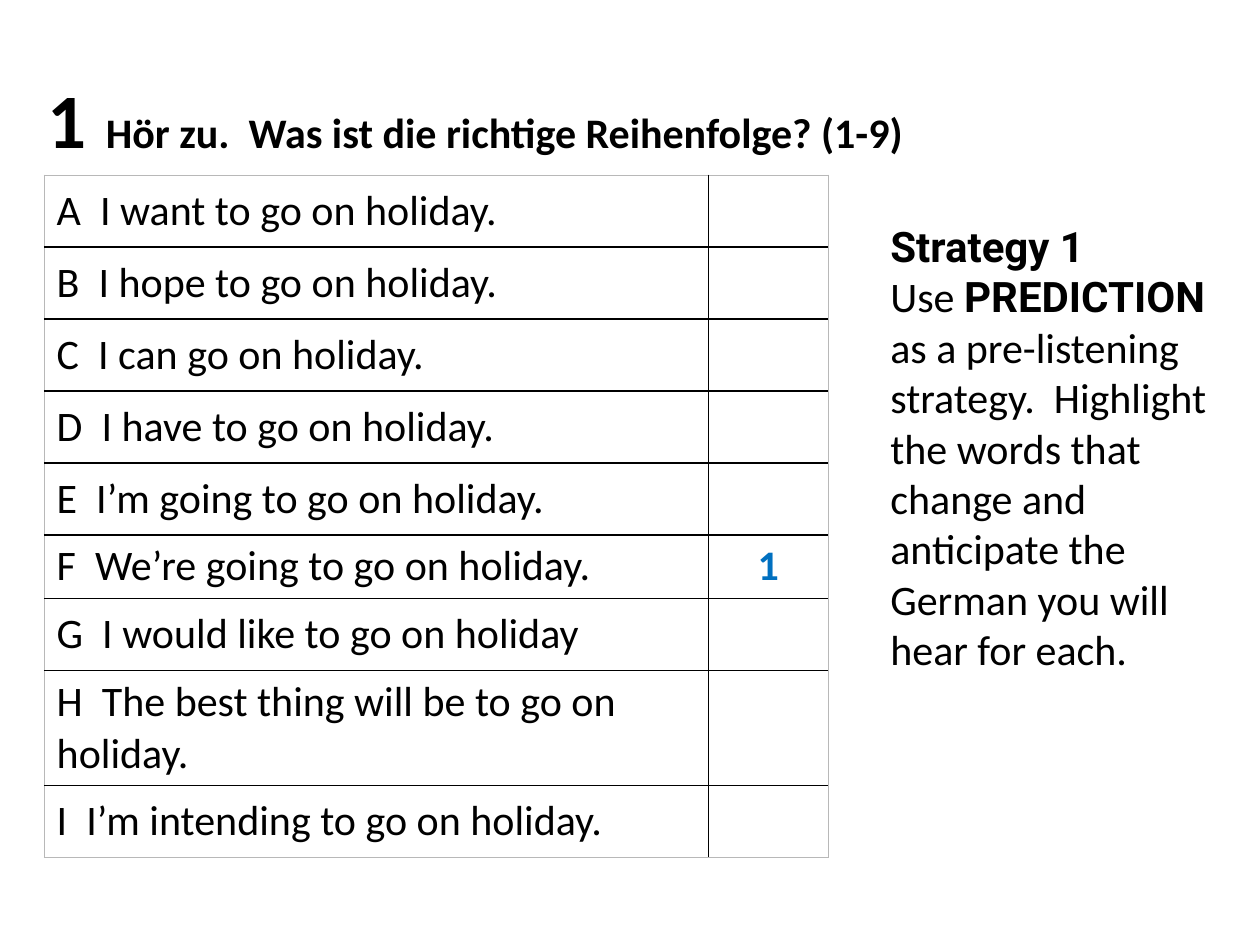
from lxml.etree import SubElement as Sub
from pptx import Presentation as Deck
from pptx.dml.color import RGBColor
from pptx.enum.text import MSO_ANCHOR as Anchor, MSO_AUTO_SIZE as Fit, PP_ALIGN as Align
from pptx.oxml.ns import qn
from pptx.util import Cm, Pt

BLACK = RGBColor(0, 0, 0)
BLUE = RGBColor(0x00, 0x70, 0xC0)
GREY = RGBColor(0xB8, 0xB8, 0xB8)
SIZE = 24
LINES = [
    "A  I want to go on holiday.",
    "B  I hope to go on holiday.",
    "C  I can go on holiday.",
    "D  I have to go on holiday.",
    "E  I’m going to go on holiday.",
    "F  We’re going to go on holiday.",
    "G  I would like to go on holiday",
    "H  The best thing will be to go on holiday.",
    "I  I’m intending to go on holiday.",
]
SOLVED = 5


def style(run, size=SIZE, bold=False, color=BLACK, face="Calibri"):
    font = run.font
    font.size, font.bold, font.name = Pt(size), bold, face
    font.color.rgb = color


def add_run(para, text, **look):
    run = para.add_run()
    run.text = text
    style(run, **look)


def add_title(slide):
    title = slide.shapes.title
    title.left, title.top = Cm(0.71), Cm(1.32)
    title.width, title.height = Cm(19.61), Cm(2.13)
    frame = title.text_frame
    frame.auto_size = Fit.NONE
    frame.vertical_anchor = Anchor.TOP
    para = frame.paragraphs[0]
    para.alignment = Align.LEFT
    add_run(para, "1", size=44, bold=True)
    add_run(para, "  Hör zu.  Was ist die richtige Reihenfolge? (1-9)", bold=True)


def add_edge(cell, side, color, width):
    line = Sub(cell._tc.get_or_add_tcPr(), qn(f"a:ln{side}"), w=str(Pt(width)))
    fill = Sub(line, qn("a:solidFill"))
    Sub(fill, qn("a:srgbClr"), val=str(color))


def draw_grid(table):
    """Black lines inside the table, a thin grey frame around it."""
    rows, cols = len(table.rows), len(table.columns)
    for i in range(rows):
        for j in range(cols):
            cell = table.cell(i, j)
            outer = {"L": j == 0, "R": j == cols - 1, "T": i == 0, "B": i == rows - 1}
            for side, rim in outer.items():
                add_edge(cell, side, GREY if rim else BLACK, 0.5 if rim else 1)
            cell.fill.background()


def fill_cell(cell, text, align=Align.LEFT, **look):
    cell.text_frame.text = text
    para = cell.text_frame.paragraphs[0]
    para.alignment = align
    style(para.runs[0], **look)
    cell.vertical_anchor = Anchor.MIDDLE


def add_list(slide):
    frame = slide.shapes.add_table(
        len(LINES), 2, Cm(0.89), Cm(3.53), Cm(15.8), Cm(13.72))
    table = frame.table
    table.first_row = table.horz_banding = False
    table.columns[0].width, table.columns[1].width = Cm(13.39), Cm(2.41)
    for i, line in enumerate(LINES):
        table.rows[i].height = Cm(1.14 if i == SOLVED else 1.45)
        fill_cell(table.cell(i, 0), line)
    fill_cell(table.cell(SOLVED, 1), "1", Align.CENTER, bold=True, color=BLUE)
    frame.height = Cm(13.72)
    draw_grid(table)


def add_tip(slide):
    box = slide.shapes.add_textbox(Cm(17.7), Cm(4.32), Cm(7.29), Cm(10.52))
    frame = box.text_frame
    frame.word_wrap = True
    frame.auto_size = Fit.SHAPE_TO_FIT_TEXT
    para = frame.paragraphs[0]
    add_run(para, "Strategy 1", bold=True, face="Roboto")
    para.add_line_break()
    add_run(para, "Use ")
    add_run(para, "PREDICTION", bold=True, face="Roboto")
    add_run(para, " as a pre-listening strategy.  Highlight the words that change "
                  "and anticipate the German you will hear for each.")


def main():
    deck = Deck()
    deck.slide_width, deck.slide_height = Cm(25.4), Cm(19.05)
    slide = deck.slides.add_slide(deck.slide_layouts[5])
    add_list(slide)
    add_title(slide)
    add_tip(slide)
    deck.save("out.pptx")


if __name__ == "__main__":
    main()
